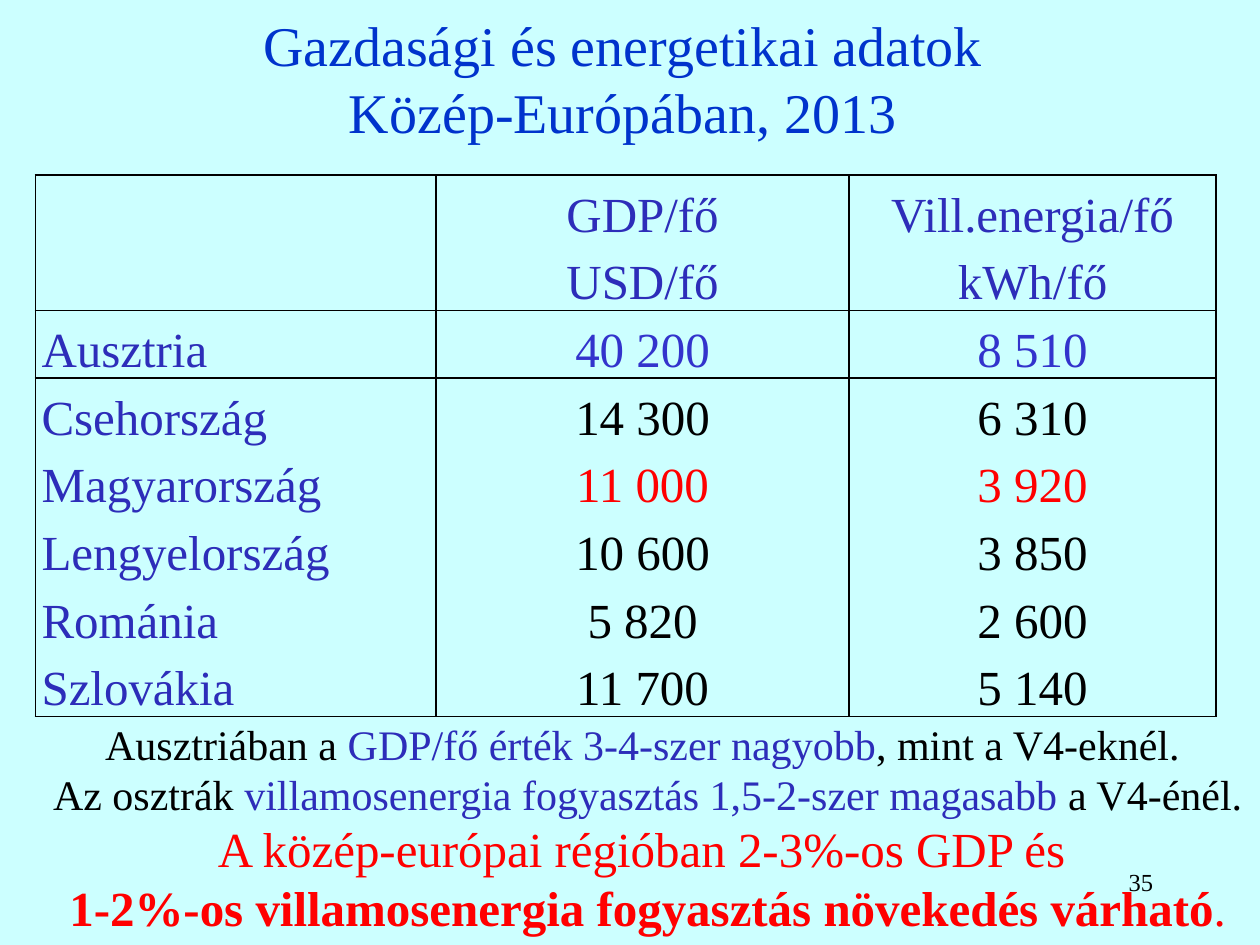
from lxml import etree
from pptx import Presentation
from pptx.dml.color import RGBColor
from pptx.enum.text import MSO_ANCHOR, PP_ALIGN
from pptx.oxml.ns import qn
from pptx.util import Inches, Pt

LEFT, CENTER, RIGHT = PP_ALIGN.LEFT, PP_ALIGN.CENTER, PP_ALIGN.RIGHT
TOP, MIDDLE, BOTTOM = MSO_ANCHOR.TOP, MSO_ANCHOR.MIDDLE, MSO_ANCHOR.BOTTOM
FONT = "Times New Roman"
BLACK, RED, INDIGO, BLUE = "000000", "FF0000", "2D2DB9", "3333CC"
TITLE_BLUE, BACKGROUND = "0033CC", "CCFFFF"
PLAIN_TABLE_STYLE = "{2D5ABB26-0587-4C30-8999-92F81FD0307C}"

TITLE = [[("Gazdasági és energetikai adatok \vKözép-Európában, 2013 ", 32, TITLE_BLUE, False)]]
PAGE_NUMBER = [[("35", 14, BLACK, False)]]
CONCLUSIONS = [
    [("Ausztriában a ", 24, BLACK, False),
     ("GDP/fő érték 3-4-szer nagyobb", 24, INDIGO, False),
     (", mint a V4-eknél. ", 24, BLACK, False)],
    [("Az osztrák ", 24, BLACK, False),
     ("villamosenergia fogyasztás 1,5-2-szer magasabb ", 24, INDIGO, False),
     ("a V4-énél.", 24, BLACK, False)],
    [("A közép-európai régióban 2-3%-os GDP és ", 28, RED, False)],
    [("1-2%-os villamosenergia fogyasztás növekedés várható", 28, RED, True),
     (".", 28, RED, False)],
]
COUNTRY_ROWS = [
    ("", "GDP/fő", "Vill.energia/fő", INDIGO),
    ("", "USD/fő", "kWh/fő", INDIGO),
    ("Ausztria", "40 200", "8 510", BLUE),
    ("Csehország", "14 300", "6 310", BLACK),
    ("Magyarország", "11 000", "3 920", RED),
    ("Lengyelország", "10 600", "3 850", BLACK),
    ("Románia", "5 820", "2 600", BLACK),
    ("Szlovákia", "11 700", "5 140", BLACK),
]
COLUMN_WIDTHS = (3.18, 3.28, 2.91)
TABLE_LEFT, TABLE_TOP, TABLE_HEIGHT = 0.28, 1.39, 4.29
RULED_ABOVE, RULED_BELOW = (0, 2), (1, 7)
CELL_FORMAT = {
    "margin_left": Inches(0.05), "margin_right": Inches(0.05),
    "margin_top": 0, "margin_bottom": 0, "vertical_anchor": BOTTOM,
}


def color(hex_value):
    return RGBColor.from_string(hex_value)


def add_runs(paragraph, runs):
    for text, size, hex_value, bold in runs:
        for index, line in enumerate(text.split("\v")):
            if index:
                paragraph.add_line_break()
            run = paragraph.add_run()
            run.text = line
            for name, value in {"name": FONT, "size": Pt(size), "bold": bold}.items():
                setattr(run.font, name, value)
            run.font.color.rgb = color(hex_value)


def add_text(slide, box, paragraphs, align, anchor):
    frame = slide.shapes.add_textbox(*map(Inches, box)).text_frame
    frame.word_wrap = True
    frame.vertical_anchor = anchor
    for index, runs in enumerate(paragraphs):
        paragraph = frame.add_paragraph() if index else frame.paragraphs[0]
        paragraph.alignment = align
        add_runs(paragraph, runs)


def add_borders(cell, sides):
    properties = cell._tc.get_or_add_tcPr()
    for side in sides:
        line = etree.SubElement(properties, qn(f"a:ln{side}"), w=str(Pt(1)))
        fill = etree.SubElement(line, qn("a:solidFill"))
        etree.SubElement(fill, qn("a:srgbClr"), val=BLACK)


def add_country_table(slide):
    frame = slide.shapes.add_table(
        len(COUNTRY_ROWS), len(COLUMN_WIDTHS), Inches(TABLE_LEFT), Inches(TABLE_TOP),
        Inches(sum(COLUMN_WIDTHS)), Inches(TABLE_HEIGHT))
    table = frame.table
    table.first_row = table.horz_banding = False
    table._tbl.tblPr.find(qn("a:tableStyleId")).text = PLAIN_TABLE_STYLE
    for column, width in zip(table.columns, COLUMN_WIDTHS):
        column.width = Inches(width)
    for row, (*texts, value_color) in enumerate(COUNTRY_ROWS):
        table.rows[row].height = Inches(TABLE_HEIGHT / len(COUNTRY_ROWS))
        sides = "LR" + "T" * (row in RULED_ABOVE) + "B" * (row in RULED_BELOW)
        for column, text in enumerate(texts):
            cell = table.cell(row, column)
            for name, value in CELL_FORMAT.items():
                setattr(cell, name, value)
            add_borders(cell, sides)
            cell.fill.background()
            if text:
                paragraph = cell.text_frame.paragraphs[0]
                paragraph.alignment = CENTER if column else LEFT
                paragraph.line_spacing = 1.15
                add_runs(paragraph, [(text, 28, value_color if column else INDIGO, False)])


def main():
    deck = Presentation()
    deck.slide_width, deck.slide_height = Inches(10), Inches(7.5)
    slide = deck.slides.add_slide(deck.slide_layouts[6])
    slide.background.fill.solid()
    slide.background.fill.fore_color.rgb = color(BACKGROUND)
    add_text(slide, (0, 0, 10, 1.23), TITLE, CENTER, MIDDLE)
    add_text(slide, (7.17, 6.83, 2.08, 0.5), PAGE_NUMBER, RIGHT, TOP)
    add_country_table(slide)
    add_text(slide, (0.28, 5.65, 9.72, 1.85), CONCLUSIONS, CENTER, TOP)
    deck.save("out.pptx")


if __name__ == "__main__":
    main()
